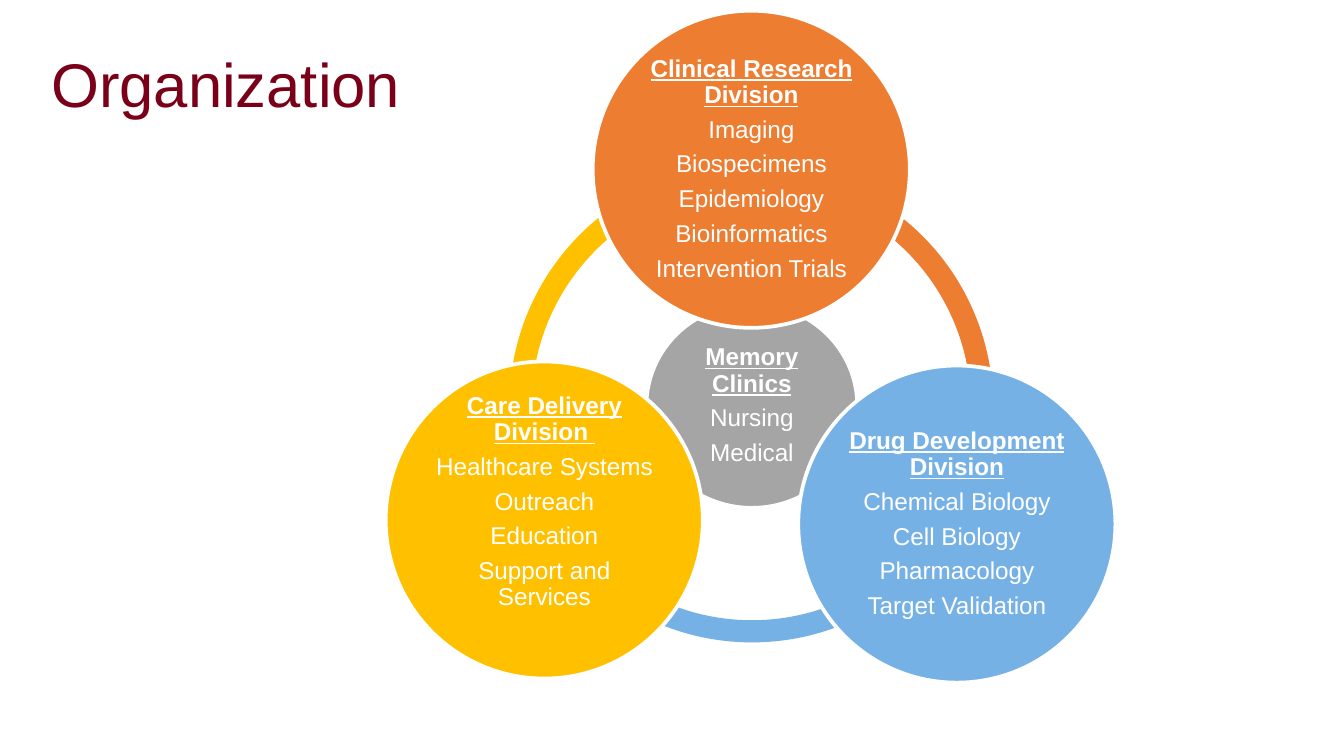
from dataclasses import dataclass

from pptx import Presentation
from pptx.dml.color import RGBColor
from pptx.enum.shapes import MSO_SHAPE as Kind
from pptx.enum.text import MSO_ANCHOR as Anchor, PP_ALIGN as Align
from pptx.util import Pt

WHITE = RGBColor(0xFF, 0xFF, 0xFF)
MAROON = RGBColor(0x7A, 0x00, 0x19)
ORANGE = RGBColor(0xED, 0x7D, 0x31)
BLUE = RGBColor(0x76, 0xB1, 0xE6)
GOLD = RGBColor(0xFF, 0xC0, 0x00)
GRAY = RGBColor(0xA5, 0xA5, 0xA5)

FONT = "Arial"
RING = 258.5     # outer width of the ring
BAND = 0.046     # ring thickness as a share of its width
INNER = 0.707    # side of the square inside a circle
DISC = 169.9     # width of a division circle


@dataclass
class Arc:
    left: float
    top: float
    start: float  # degrees
    end: float
    color: RGBColor


@dataclass
class Unit:
    x: float  # centre
    y: float
    wide: float
    high: float
    color: RGBColor
    name: str
    teams: list[str]
    lift: float = 0  # text raised above the centre


ARCS = [
    Arc(272.9, 87.8, 151.16, 270.15, GOLD),
    Arc(273.6, 85.7, 29.57, 151.58, BLUE),
    Arc(273.6, 88.6, 269.73, 30, ORANGE),
]

UNITS = [
    Unit(402.8, 217.4, 113, 109.4, GRAY, "Memory Clinics",
         ["Nursing", "Medical"]),
    Unit(402.5, 90.7, DISC, DISC, ORANGE, "Clinical Research Division",
         ["Imaging", "Biospecimens", "Epidemiology", "Bioinformatics",
          "Intervention Trials"]),
    Unit(512.6, 280.8, DISC, DISC, BLUE, "Drug Development Division",
         ["Chemical Biology", "Cell Biology", "Pharmacology",
          "Target Validation"]),
    Unit(291.6, 278.6, DISC, DISC, GOLD, "Care Delivery Division ",
         ["Healthcare Systems", "Outreach", "Education",
          "Support and Services"], lift=9.5),
]


def write(para, text: str, *, size: float, color: RGBColor,
          align=Align.LEFT, head: bool = False) -> None:
    para.alignment = align
    run = para.add_run()
    run.text = text
    font = run.font
    font.name, font.size = FONT, Pt(size)
    font.bold = font.underline = head
    font.color.rgb = color


def set_frame(frame, side: float, edge: float) -> None:
    frame.word_wrap = True
    frame.vertical_anchor = Anchor.MIDDLE
    frame.margin_left = frame.margin_right = Pt(side)
    frame.margin_top = frame.margin_bottom = Pt(edge)


def draw_arc(slide, arc: Arc) -> None:
    shape = slide.shapes.add_shape(
        Kind.BLOCK_ARC, Pt(arc.left), Pt(arc.top), Pt(RING), Pt(RING))
    shape.shadow.inherit = False
    # Angles count 60000 to the degree, adjustments 100000 to the unit
    for i, value in enumerate((arc.start * 0.6, arc.end * 0.6, BAND)):
        shape.adjustments[i] = value
    shape.fill.solid()
    shape.fill.fore_color.rgb = arc.color
    shape.line.fill.background()


def draw_unit(slide, unit: Unit) -> None:
    # Circle
    disc = slide.shapes.add_shape(
        Kind.OVAL, Pt(unit.x - unit.wide / 2), Pt(unit.y - unit.high / 2),
        Pt(unit.wide), Pt(unit.high))
    disc.shadow.inherit = False
    disc.fill.solid()
    disc.fill.fore_color.rgb = unit.color
    disc.line.color.rgb = WHITE
    disc.line.width = Pt(2)

    # Heading and list inside it
    wide, high = unit.wide * INNER, unit.high * INNER
    box = slide.shapes.add_textbox(
        Pt(unit.x - wide / 2), Pt(unit.y - high / 2 - unit.lift),
        Pt(wide), Pt(high))
    frame = box.text_frame
    set_frame(frame, 1.3, 1.3)
    for i, text in enumerate([unit.name, *unit.teams]):
        para = frame.add_paragraph() if i else frame.paragraphs[0]
        para.line_spacing = 0.9
        para.space_after = Pt(4.55)
        write(para, text, size=13, color=WHITE, align=Align.CENTER,
              head=i == 0)


def main() -> None:
    deck = Presentation()
    deck.slide_width, deck.slide_height = Pt(720), Pt(405)
    slide = deck.slides.add_slide(deck.slide_layouts[5])

    # Title
    title = slide.shapes.title
    title.left, title.top = Pt(21.6), Pt(10.8)
    title.width, title.height = Pt(612), Pt(67.7)
    set_frame(title.text_frame, 5.8, 2.9)
    write(title.text_frame.paragraphs[0], "Organization",
          size=33, color=MAROON)

    # Ring, then the circles over it
    for arc in ARCS:
        draw_arc(slide, arc)
    for unit in UNITS:
        draw_unit(slide, unit)

    deck.save("out.pptx")


if __name__ == "__main__":
    main()
